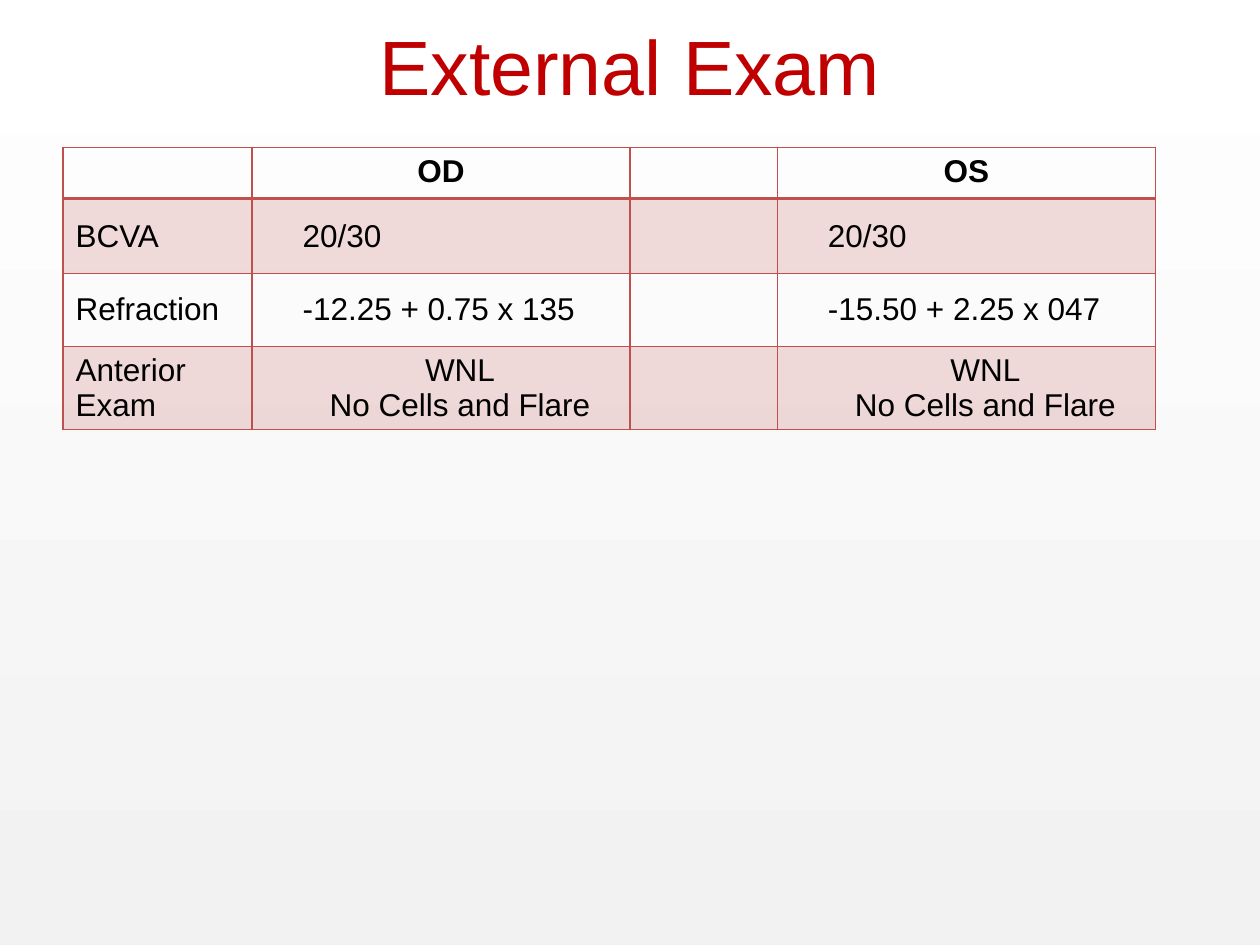
from lxml import etree
from pptx import Presentation
from pptx.dml.color import RGBColor
from pptx.enum import text
from pptx.oxml import ns
from pptx.util import Cm, Pt

ACCENT, BLACK, TITLE_RED = "C0504D", "000000", "C00000"
COLUMN_WIDTHS = (3.81, 7.62, 2.97, 7.62)
ROW_HEIGHTS = (1.04, 1.5, 1.47, 1.27)
FINDINGS = "WNL\nNo Cells and Flare"
EXAM = (
    ("", "OD", "", "OS"),
    ("BCVA", "20/30", "", "20/30"),
    ("Refraction", "-12.25 + 0.75 x 135", "", "-15.50 + 2.25 x 047"),
    ("Anterior Exam", FINDINGS, "", FINDINGS),
)


def rgb(value):
    return RGBColor.from_string(value)


def set_values(target, values):
    for name, value in values.items():
        setattr(target, name, value)


def format_text(frame, size, color, alignment, bold=False):
    for paragraph in frame.paragraphs:
        paragraph.alignment = alignment
        set_values(paragraph.font, {"name": "Arial", "size": Pt(size), "bold": bold})
        paragraph.font.color.rgb = rgb(color)


def paint_background(slide):
    fill = slide.background.fill
    fill.gradient()
    fill.gradient_angle = 90
    for stop, color in zip(fill.gradient_stops, ("F2F2F2", "FFFFFF")):
        stop.color.rgb = rgb(color)


def add_title(slide, wording):
    title = slide.shapes.title
    set_values(title, {"left": Cm(1.27), "top": Cm(-0.28),
                       "width": Cm(22.86), "height": Cm(3.18)})
    title.text_frame.text = wording
    title.text_frame.vertical_anchor = text.MSO_ANCHOR.MIDDLE
    format_text(title.text_frame, 44, TITLE_RED, text.PP_ALIGN.CENTER)


def add_borders(cell, widths):
    """Draw cell borders; widths maps the sides L, R, T, B, in that order, to points."""
    properties = cell._tc.get_or_add_tcPr()
    for side, width in widths.items():
        line = etree.SubElement(properties, ns.qn(f"a:ln{side}"), w=str(Pt(width)))
        fill = etree.SubElement(line, ns.qn("a:solidFill"))
        etree.SubElement(fill, ns.qn("a:srgbClr"), val=ACCENT)


def fill_cell(cell, tinted):
    if not tinted:
        cell.fill.background()
        return
    cell.fill.solid()
    cell.fill.fore_color.rgb = rgb(ACCENT)
    color = cell._tc.tcPr.find(ns.qn("a:solidFill")).find(ns.qn("a:srgbClr"))
    etree.SubElement(color, ns.qn("a:alpha"), val="20000")


def format_cell(cell, row, column):
    header = row == 0
    add_borders(cell, {"L": 1, "R": 1, "T": 2 if row == 1 else 1, "B": 2 if header else 1})
    fill_cell(cell, tinted=row % 2 == 1)
    if not header:
        cell.vertical_anchor = text.MSO_ANCHOR.MIDDLE
        if column in (1, 3):
            cell.margin_left = Cm(1.02)
    centred = header or cell.text == FINDINGS
    alignment = text.PP_ALIGN.CENTER if centred else text.PP_ALIGN.LEFT
    format_text(cell.text_frame, 18, BLACK, alignment, bold=header)


def add_exam_table(slide):
    table = slide.shapes.add_table(
        len(EXAM), len(COLUMN_WIDTHS), Cm(1.27), Cm(2.97),
        Cm(sum(COLUMN_WIDTHS)), Cm(sum(ROW_HEIGHTS))).table
    set_values(table, {"first_row": False, "horz_banding": False})
    for column, width in zip(table.columns, COLUMN_WIDTHS):
        column.width = Cm(width)
    for row, height in zip(table.rows, ROW_HEIGHTS):
        row.height = Cm(height)
    for row, entries in enumerate(EXAM):
        for column, entry in enumerate(entries):
            cell = table.cell(row, column)
            cell.text = entry
            format_cell(cell, row, column)


def main():
    presentation = Presentation()
    set_values(presentation, {"slide_width": Cm(25.4), "slide_height": Cm(19.05)})
    slide = presentation.slides.add_slide(presentation.slide_layouts[5])
    paint_background(slide)
    add_title(slide, "External Exam")
    add_exam_table(slide)
    presentation.save("out.pptx")


if __name__ == "__main__":
    main()
